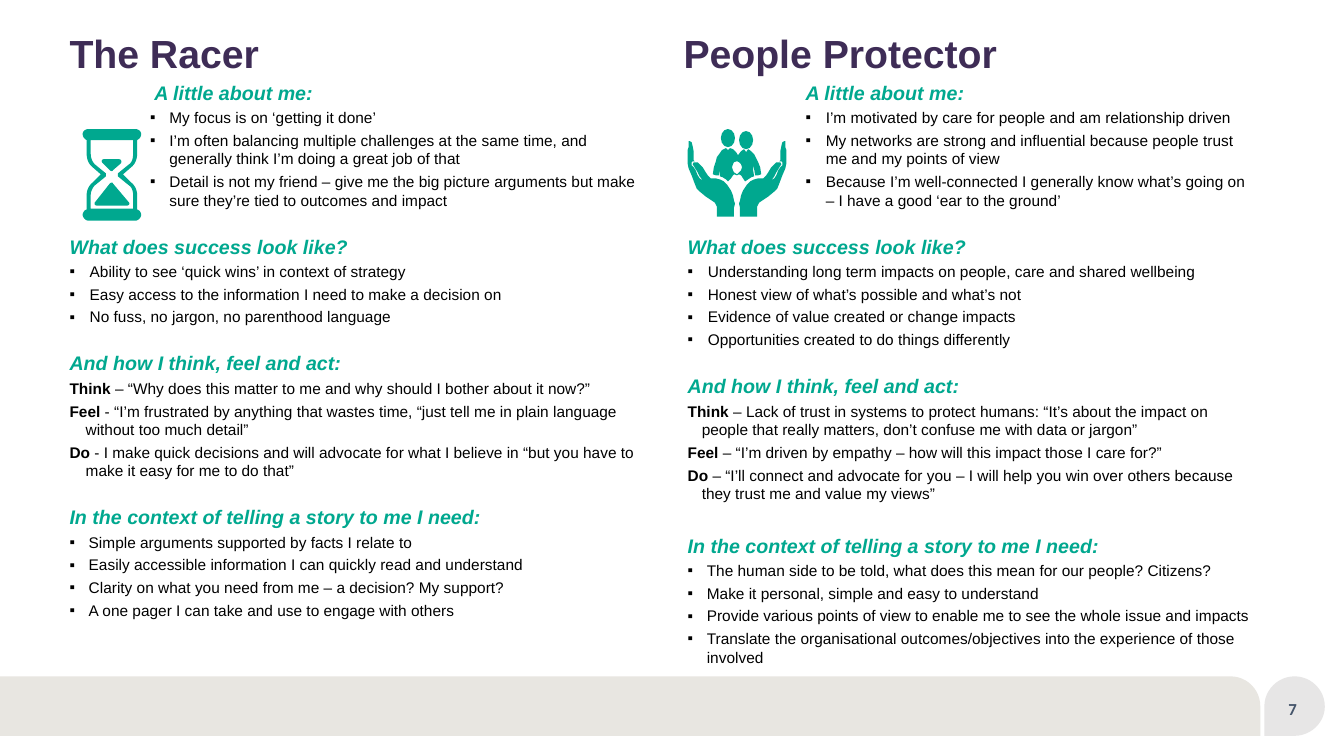
from dataclasses import dataclass

from lxml.etree import SubElement
from pptx import Presentation
from pptx.dml.color import RGBColor
from pptx.enum.shapes import MSO_SHAPE
from pptx.enum.text import MSO_ANCHOR, PP_ALIGN
from pptx.oxml.ns import qn
from pptx.util import Inches, Pt

COLORS = {"title": "3E2C56", "accent": "00A88F", "text": "000000",
          "footer": "E8E6E1", "badge": "E7E6E6", "number": "44546A"}

# An outline step is a point (x, y) or a cubic curve (x1, y1, x2, y2, x, y)
Contour = list[tuple[float, ...]]


@dataclass
class Section:
    heading: str
    lines: list[str | tuple[str, str]]  # a pair is a bold label and its text
    margin: float
    hanging: float
    heading_margin: float = 0
    gap: float = 15


@dataclass
class Persona:
    title: str
    title_left: float
    left: float
    width: float
    height: float
    sections: list[Section]


ABOUT = "A little about me:"
SUCCESS = "What does success look like?"
THINKING = "And how I think, feel and act:"
STORY = "In the context of telling a story to me I need:"

PERSONAS = [
    Persona("The Racer", 0.69, 0.69, 5.73, 4.95, [
        Section(ABOUT, [
            "My focus is on ‘getting it done’",
            "I’m often balancing multiple challenges at the same time, and generally think I’m doing a great job of that",
            "Detail is not my friend – give me the big picture arguments but make sure they’re tied to outcomes and impact",
        ], 0.99, 0.19, heading_margin=0.84, gap=0),
        Section(SUCCESS, [
            "Ability to see ‘quick wins’ in context of strategy",
            "Easy access to the information I need to make a decision on",
            "No fuss, no jargon, no parenthood language",
        ], 0.2, 0.2),
        Section(THINKING, [
            ("Think", " – “Why does this matter to me and why should I bother about it now?”"),
            ("Feel", " - “I’m frustrated by anything that wastes time, “just tell me in plain language without too much detail”"),
            ("Do", " - I make quick decisions and will advocate for what I believe in “but you have to make it easy for me to do that”"),
        ], 0.16, 0.16),
        Section(STORY, [
            "Simple arguments supported by facts I relate to",
            "Easily accessible information I can quickly read and understand",
            "Clarity on what you need from me – a decision? My support?",
            "A one pager I can take and use to engage with others",
        ], 0.19, 0.19),
    ]),
    Persona("People Protector", 6.78, 6.82, 5.65, 5.19, [
        Section(ABOUT, [
            "I’m motivated by care for people and am relationship driven",
            "My networks are strong and influential because people trust me and my points of view",
            "Because I’m well-connected I generally know what’s going on – I have a good ‘ear to the ground’",
        ], 1.37, 0.2, heading_margin=1.17, gap=0),
        Section(SUCCESS, [
            "Understanding long term impacts on people, care and shared wellbeing",
            "Honest view of what’s possible and what’s not",
            "Evidence of value created or change impacts",
            "Opportunities created to do things differently",
        ], 0.2, 0.2),
        Section(THINKING, [
            ("Think", " – Lack of trust in systems to protect humans: “It’s about the impact on people that really matters, don’t confuse me with data or jargon”"),
            ("Feel", " – “I’m driven by empathy – how will this impact those I care for?”"),
            ("Do", " – “I’ll connect and advocate for you – I will help you win over others because they trust me and value my views”"),
        ], 0.14, 0.14),
        Section(STORY, [
            "The human side to be told, what does this mean for our people? Citizens?",
            "Make it personal, simple and easy to understand",
            "Provide various points of view to enable me to see the whole issue and impacts",
            "Translate the organisational outcomes/objectives into the experience of those involved",
        ], 0.19, 0.19, gap=19),
    ]),
]

LEFT_HAND: Contour = [
    (6.84, 1.4), (6.86, 1.41), (6.87, 1.45), (6.88, 1.5), (6.88, 1.59), (6.89, 1.6), (6.87, 1.6), (6.86, 1.61),
    (6.86, 1.64), (6.88, 1.66), (6.9, 1.69), (6.92, 1.74), (6.94, 1.77), (6.97, 1.79), (6.94, 1.75), (6.92, 1.71),
    (6.89, 1.66), (6.87, 1.63), (6.88, 1.61), (6.9, 1.61), (6.92, 1.61), (6.94, 1.63), (6.97, 1.66), (7, 1.71),
    (7.02, 1.74), (7.05, 1.77), (7.1, 1.77), (7.14, 1.78), (7.18, 1.8), (7.21, 1.83), (7.25, 1.89), (7.27, 1.94),
    (7.28, 1.99), (7.29, 2.02), (7.28, 2.06), (7.28, 2.15), (7.11, 2.15), (7.11, 2.05), (7.09, 2.01), (7.06, 1.99),
    (7, 1.95), (6.94, 1.9), (6.91, 1.87), (6.89, 1.82), (6.86, 1.74), (6.83, 1.67), (6.82, 1.62), (6.82, 1.49),
    (6.83, 1.46), (6.83, 1.4)]
HANDS_MIRROR = 14.62
RIGHT_HAND: Contour = [(HANDS_MIRROR - x, y) for x, y in LEFT_HAND]
FAMILY: list[Contour] = [
    [(7.31, 1.6), (7.28, 1.61), (7.27, 1.63), (7.26, 1.66), (7.27, 1.69), (7.28, 1.71), (7.31, 1.73),
     (7.33, 1.71), (7.35, 1.69), (7.36, 1.66), (7.35, 1.63), (7.33, 1.61)],
    [(7.2, 1.47), (7.22, 1.49), (7.24, 1.47), (7.27, 1.48), (7.3, 1.51), (7.32, 1.54), (7.35, 1.5), (7.38, 1.48),
     (7.4, 1.51), (7.42, 1.48), (7.45, 1.5), (7.48, 1.53), (7.5, 1.57), (7.52, 1.61), (7.54, 1.66), (7.55, 1.73),
     (7.52, 1.74), (7.49, 1.74), (7.48, 1.68), (7.47, 1.64), (7.47, 1.69), (7.48, 1.75), (7.45, 1.76), (7.42, 1.78),
     (7.39, 1.8), (7.37, 1.77), (7.35, 1.74), (7.33, 1.73), (7.31, 1.74), (7.28, 1.73), (7.27, 1.74), (7.25, 1.77),
     (7.22, 1.8), (7.2, 1.78), (7.17, 1.76), (7.14, 1.75), (7.14, 1.64), (7.14, 1.68), (7.13, 1.74), (7.1, 1.74),
     (7.07, 1.73), (7.08, 1.66), (7.1, 1.6), (7.11, 1.56), (7.14, 1.52), (7.16, 1.49), (7.18, 1.48)]]
HOURGLASS_FRAME: list[Contour] = [
    [(0.94, 1.84), (1.05, 1.75), (1.05, 1.74, 1.05, 1.73, 1.05, 1.72), (0.94, 1.63),
     (0.92, 1.61, 0.9, 1.57, 0.9, 1.53), (0.9, 1.39), (1.32, 1.39), (1.32, 1.53),
     (1.32, 1.57, 1.31, 1.61, 1.28, 1.63), (1.17, 1.72), (1.17, 1.73, 1.17, 1.74, 1.17, 1.75), (1.28, 1.84),
     (1.31, 1.86, 1.32, 1.9, 1.32, 1.93), (1.32, 2.07), (0.9, 2.07), (0.9, 1.93),
     (0.9, 1.9, 0.92, 1.86, 0.94, 1.84)],
    [(1.36, 2.08), (1.36, 1.93), (1.36, 1.89, 1.34, 1.84, 1.3, 1.81), (1.22, 1.73), (1.3, 1.66),
     (1.34, 1.63, 1.36, 1.58, 1.36, 1.53), (1.36, 1.39), (1.38, 1.38, 1.4, 1.36, 1.4, 1.33),
     (1.4, 1.3, 1.37, 1.28, 1.34, 1.28), (0.88, 1.28), (0.85, 1.28, 0.82, 1.3, 0.82, 1.33),
     (0.82, 1.36, 0.84, 1.38, 0.86, 1.39), (0.86, 1.53), (0.86, 1.58, 0.88, 1.63, 0.92, 1.66), (1, 1.73),
     (0.92, 1.81), (0.88, 1.84, 0.86, 1.89, 0.86, 1.93), (0.86, 2.08), (0.84, 2.08, 0.82, 2.11, 0.82, 2.13),
     (0.82, 2.16, 0.85, 2.19, 0.88, 2.19), (1.34, 2.19), (1.37, 2.19, 1.4, 2.16, 1.4, 2.13),
     (1.4, 2.11, 1.38, 2.08, 1.36, 2.08)]]
LOWER_SAND: Contour = [
    (0.96, 2.04), (1.26, 2.04), (1.27, 2.04, 1.29, 2.03, 1.28, 2.01), (1.12, 1.82),
    (1.12, 1.81, 1.1, 1.81, 1.09, 1.82), (0.94, 2.01), (0.93, 2.03, 0.95, 2.04, 0.96, 2.04)]
UPPER_SAND: Contour = [
    (1.09, 1.69), (1.1, 1.7, 1.12, 1.7, 1.12, 1.69), (1.2, 1.62), (1.21, 1.6, 1.2, 1.58, 1.18, 1.58),
    (1.03, 1.58), (1.01, 1.58, 1, 1.6, 1.02, 1.62)]
BADGE: Contour = [
    (12.84, 6.71), (13, 6.71, 13.14, 6.84, 13.14, 7.01), (13.14, 7.17, 13, 7.3, 12.84, 7.3),
    (12.54, 7.3), (12.54, 7.01), (12.54, 6.84, 12.68, 6.71, 12.84, 6.71)]


def paint(shape, color: str) -> None:
    shape.shadow.inherit = False
    shape.fill.solid()
    shape.fill.fore_color.rgb = RGBColor.from_string(COLORS[color])
    shape.line.fill.background()


def add_preset(shapes, preset: MSO_SHAPE, left: float, top: float, width: float, height: float, color: str):
    shape = shapes.add_shape(preset, Inches(left), Inches(top), Inches(width), Inches(height))
    paint(shape, color)
    return shape


def flatten(contour: Contour, steps: int = 12) -> list[tuple[int, int]]:
    """Turn lines and cubic curves into a run of points."""
    points = []
    for step in contour:
        if len(step) == 2:
            points.append(step)
            continue
        controls = [points[-1], step[:2], step[2:4], step[4:]]
        for t in (index / steps for index in range(1, steps + 1)):
            weights = ((1 - t) ** 3, 3 * t * (1 - t) ** 2, 3 * t ** 2 * (1 - t), t ** 3)
            points.append(tuple(sum(w * c[axis] for w, c in zip(weights, controls)) for axis in (0, 1)))
    return [(Inches(x), Inches(y)) for x, y in points]


def add_outline(shapes, contours: list[Contour], color: str):
    first, *others = [flatten(contour) for contour in contours]
    builder = shapes.build_freeform(*first[0])
    builder.add_line_segments(first[1:], close=True)
    for points in others:
        builder.move_to(*points[0])
        builder.add_line_segments(points[1:], close=True)
    shape = builder.convert_to_shape()
    paint(shape, color)
    return shape


def add_text(paragraph, text: str, *, size: float, color: str, bold: bool = False,
             italic: bool = False, font: str = "Arial") -> None:
    run = paragraph.add_run()
    run.text = text
    run.font.name, run.font.size = font, Pt(size)
    run.font.bold, run.font.italic = bold, italic
    run.font.color.rgb = RGBColor.from_string(COLORS[color])


def set_margins(frame, left: float = 0, top: float = 0, right: float = 0, bottom: float = 0) -> None:
    frame.margin_left, frame.margin_top = Inches(left), Inches(top)
    frame.margin_right, frame.margin_bottom = Inches(right), Inches(bottom)


def add_frame(slide, left: float, top: float, width: float, height: float):
    frame = slide.shapes.add_textbox(Inches(left), Inches(top), Inches(width), Inches(height)).text_frame
    frame.word_wrap = True
    set_margins(frame)
    return frame


def format_paragraph(paragraph, margin: float, hanging: float = 0, bullet: bool = False, before: float = 0) -> None:
    if before:
        paragraph.space_before = Pt(before)
    paragraph.space_after = Pt(3)
    properties = paragraph._p.get_or_add_pPr()
    properties.set("marL", str(Inches(margin)))
    properties.set("indent", str(-Inches(hanging)))
    if bullet:
        SubElement(properties, qn("a:buFont"), typeface="Arial")
        SubElement(properties, qn("a:buChar"), char="▪")


def add_persona(slide, persona: Persona) -> None:
    title = add_frame(slide, persona.title_left, 0.34, 5.73, 0.46).paragraphs[0]
    title.line_spacing = 0.9
    add_text(title, persona.title, size=28, color="title", bold=True)

    frame = add_frame(slide, persona.left, 0.8, persona.width, persona.height)
    for index, section in enumerate(persona.sections):
        heading = frame.add_paragraph() if index else frame.paragraphs[0]
        format_paragraph(heading, section.heading_margin, before=section.gap)
        add_text(heading, section.heading, size=14, color="accent", bold=True, italic=True)
        for line in section.lines:
            paragraph = frame.add_paragraph()
            labelled = isinstance(line, tuple)
            format_paragraph(paragraph, section.margin, section.hanging, bullet=not labelled)
            label, text = line if labelled else ("", line)
            if label:
                add_text(paragraph, label, size=11, color="text", bold=True)
            add_text(paragraph, text, size=11, color="text")


def main() -> None:
    presentation = Presentation()
    presentation.slide_width, presentation.slide_height = Inches(13.33), Inches(7.5)
    slide = presentation.slides.add_slide(presentation.slide_layouts[6])

    # Footer bar
    bar = add_preset(slide.shapes, MSO_SHAPE.ROUND_1_RECTANGLE, 0, 6.71, 12.5, 0.59, "footer")
    bar.adjustments[0] = 0.5

    # Persona columns
    for persona in PERSONAS:
        add_persona(slide, persona)

    # Family in caring hands
    family = slide.shapes.add_group_shape().shapes
    for contours in ([LEFT_HAND], [RIGHT_HAND], FAMILY):
        add_outline(family, contours, "accent")
    for left, top in ((7.15, 1.28), (7.33, 1.3)):
        add_preset(family, MSO_SHAPE.OVAL, left, top, 0.14, 0.18, "accent")

    # Hourglass
    hourglass = slide.shapes.add_group_shape().shapes
    for contours in (HOURGLASS_FRAME, [LOWER_SAND], [UPPER_SAND]):
        add_outline(hourglass, contours, "accent")

    # Page number badge
    frame = add_outline(slide.shapes, [BADGE], "badge").text_frame
    set_margins(frame, 0.06, 0.1, 0.1, 0.05)
    frame.vertical_anchor = MSO_ANCHOR.MIDDLE
    frame.paragraphs[0].alignment = PP_ALIGN.CENTER
    add_text(frame.paragraphs[0], "7", size=12, color="number", bold=True, font="Calibri")

    presentation.save("out.pptx")


if __name__ == "__main__":
    main()
